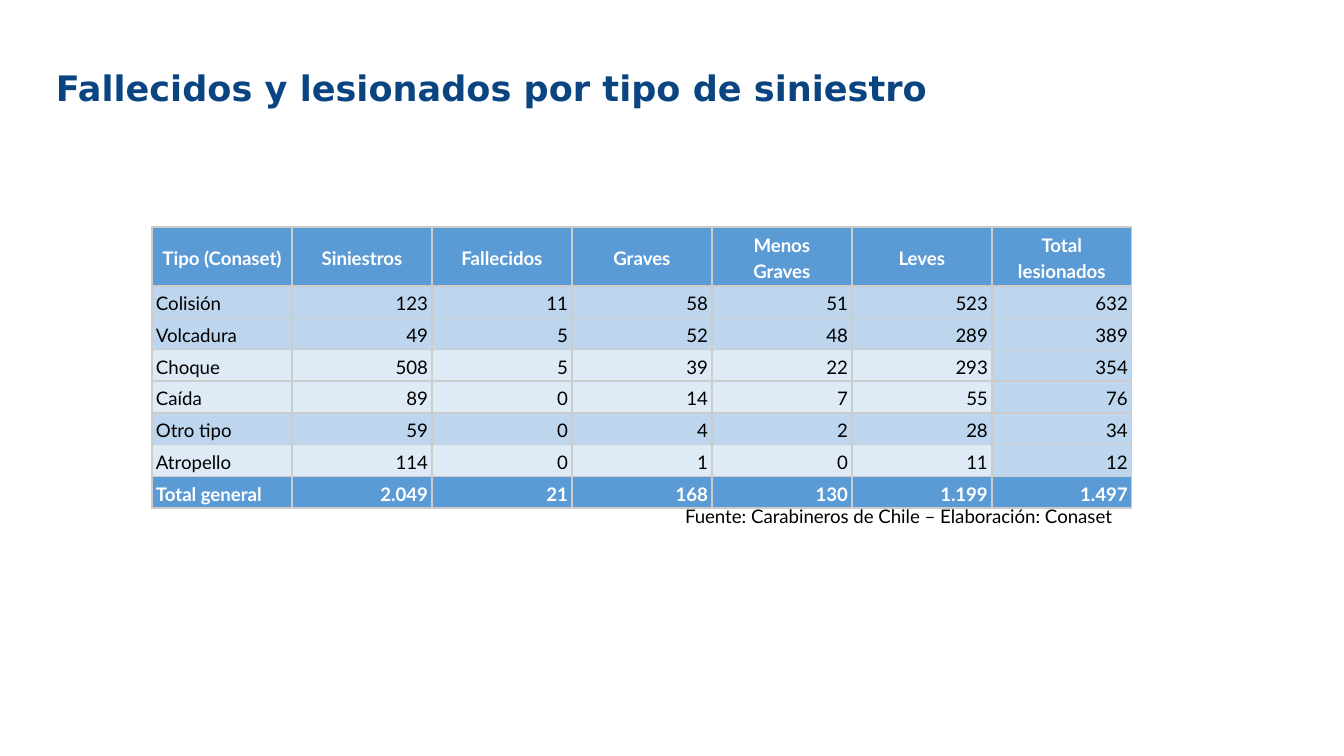
from lxml.etree import SubElement
from pptx import Presentation
from pptx.dml.color import RGBColor
from pptx.enum.text import MSO_ANCHOR, PP_ALIGN
from pptx.oxml.ns import qn
from pptx.util import Emu, Pt

PX = 914400 / 134.4
NAVY = RGBColor(0x0B, 0x45, 0x81)
BLUE = RGBColor(0x5B, 0x9B, 0xD5)
MEDIUM_BLUE = RGBColor(0xBD, 0xD6, 0xEE)
PALE_BLUE = RGBColor(0xDE, 0xEA, 0xF6)
GRAY = RGBColor(0xCC, 0xCC, 0xCC)
WHITE = RGBColor(0xFF, 0xFF, 0xFF)
BLACK = RGBColor(0x00, 0x00, 0x00)


def px(count):
    return Emu(round(count * PX))


def write(frame, text, align, spacing, margins, size, name, color, bold):
    """Fill a text frame, one paragraph for each line of text."""
    frame.word_wrap = True
    for side, margin in zip(("left", "top", "right", "bottom"), margins):
        setattr(frame, f"margin_{side}", px(margin))
    for number, line in enumerate(text.split("\n")):
        para = frame.add_paragraph() if number else frame.paragraphs[0]
        para.alignment = align
        para.line_spacing = spacing
        span = para.add_run()
        span.text = line
        for key, value in {"size": Pt(size), "name": name, "bold": bold}.items():
            setattr(span.font, key, value)
        span.font.color.rgb = color


deck = Presentation()
deck.slide_width, deck.slide_height = px(1344), px(756)
page = deck.slides.add_slide(deck.slide_layouts[6])

# Title
title = page.shapes.add_textbox(px(46), px(66), px(1252), px(84))
write(title.text_frame, "Fallecidos y lesionados por tipo de siniestro",
      PP_ALIGN.LEFT, 0.9, (10, 5, 10, 5), 18.8, "DejaVu Sans", NAVY, True)

# Table contents, with the fill of each row
rows = [
    (BLUE, ["Tipo (Conaset)", "Siniestros", "Fallecidos", "Graves",
            "Menos\nGraves", "Leves", "Total\nlesionados"]),
    (MEDIUM_BLUE, ["Colisión", "123", "11", "58", "51", "523", "632"]),
    (MEDIUM_BLUE, ["Volcadura", "49", "5", "52", "48", "289", "389"]),
    (PALE_BLUE, ["Choque", "508", "5", "39", "22", "293", "354"]),
    (PALE_BLUE, ["Caída", "89", "0", "14", "7", "55", "76"]),
    (MEDIUM_BLUE, ["Otro tipo", "59", "0", "4", "2", "28", "34"]),
    (PALE_BLUE, ["Atropello", "114", "0", "1", "0", "11", "12"]),
    (BLUE, ["Total general", "2.049", "21", "168", "130", "1.199", "1.497"]),
]
column_count = len(rows[0][1])
table = page.shapes.add_table(len(rows), column_count, px(152), px(227),
                              px(980), px(276)).table
table.first_row = table.horz_banding = False
for column in table.columns:
    column.width = px(140)

for row_index, (row_fill, texts) in enumerate(rows):
    is_header = row_index == 0
    table.rows[row_index].height = px(59 if is_header else 31)
    for column_index, text in enumerate(texts):
        cell = table.cell(row_index, column_index)

        # Borders come before the fill in the cell properties
        properties = cell._tc.get_or_add_tcPr()
        for edge in ("a:lnL", "a:lnR", "a:lnT", "a:lnB"):
            line = SubElement(properties, qn(edge), w=str(Pt(0.94)))
            paint = SubElement(line, qn("a:solidFill"))
            SubElement(paint, qn("a:srgbClr"), val=str(GRAY))

        # The last column keeps the stronger tint in every data row
        is_total_column = column_index == column_count - 1
        cell.fill.solid()
        cell.fill.fore_color.rgb = (
            MEDIUM_BLUE if is_total_column and row_fill == PALE_BLUE else row_fill)

        if is_header:
            align = PP_ALIGN.CENTER
        else:
            align = PP_ALIGN.RIGHT if column_index else PP_ALIGN.LEFT
        strong = row_fill == BLUE
        write(cell.text_frame, text, align, 1.15, (4, 3, 4, 3), 10, "Lato",
              WHITE if strong else BLACK, strong)
        for side, margin in {"left": 4, "top": 3, "right": 4, "bottom": 3}.items():
            setattr(cell, f"margin_{side}", px(margin))
        cell.vertical_anchor = MSO_ANCHOR.MIDDLE if is_header else MSO_ANCHOR.BOTTOM

# Source note
note = page.shapes.add_textbox(px(672), px(494), px(482), px(50))
write(note.text_frame, "Fuente: Carabineros de Chile – Elaboración: Conaset",
      PP_ALIGN.LEFT, 1.0, (13, 13, 13, 13), 10, "Lato", BLACK, False)

deck.save("out.pptx")
